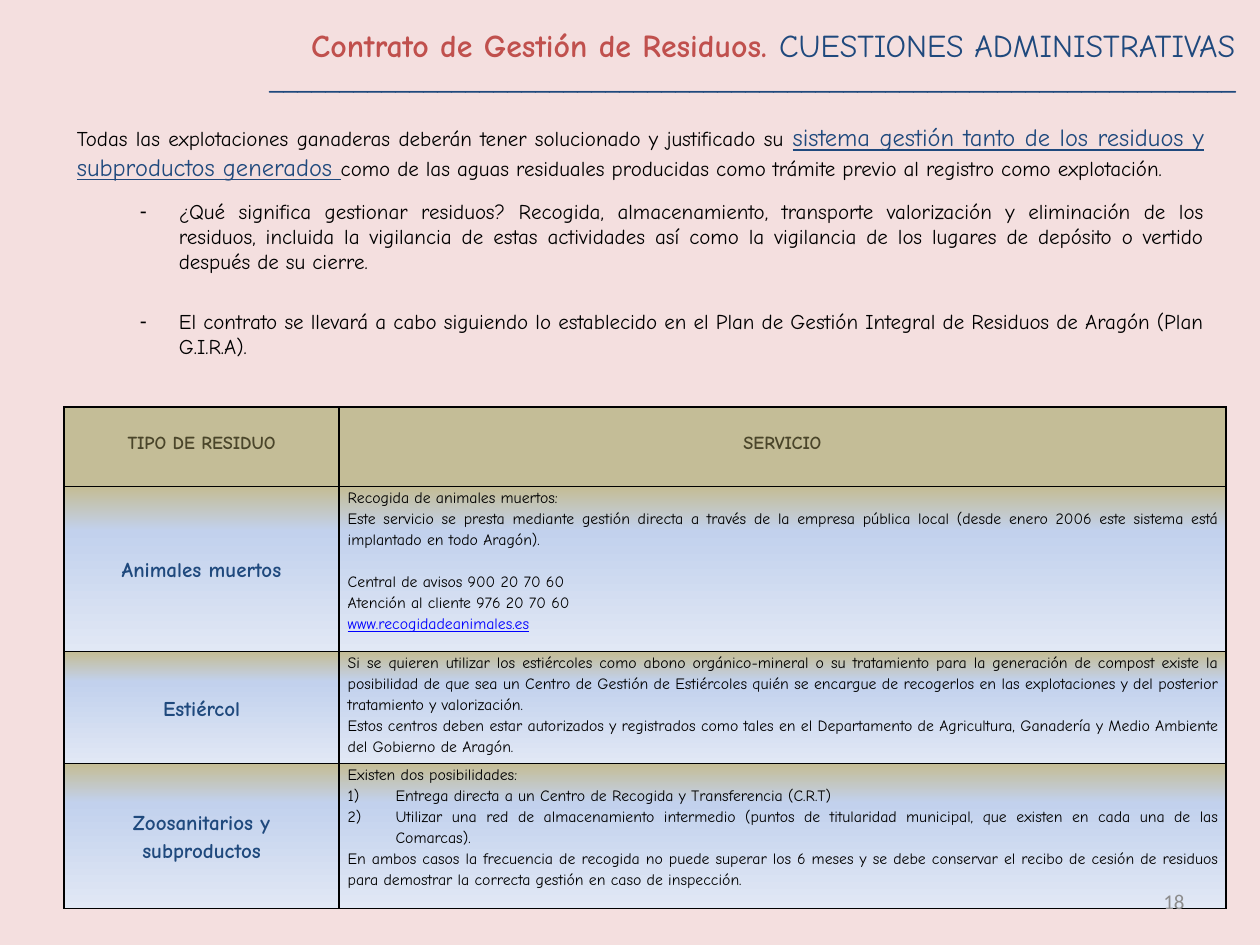
from lxml import etree
from pptx import Presentation
from pptx import util as u
from pptx.dml.color import RGBColor
from pptx.enum import text
from pptx.oxml.ns import qn

BACKGROUND = RGBColor(0xF4, 0xDF, 0xDF)
RED = RGBColor(0xC0, 0x50, 0x4D)
NAVY = RGBColor(0x1F, 0x49, 0x7D)
BLACK = RGBColor(0, 0, 0)
LINK = RGBColor(0, 0, 0xFF)
GREY = RGBColor(0x8C, 0x8C, 0x8C)
KHAKI = RGBColor(0xC4, 0xBD, 0x97)
BROWN = RGBColor(0x4A, 0x45, 0x2A)
PALE_BLUE = RGBColor(0xC2, 0xD1, 0xED)
ICE = RGBColor(0xE1, 0xE8, 0xF5)
CELL_GRADIENT = [(1, KHAKI), (27, PALE_BLUE), (100, ICE)]

ALIGN = text.PP_ALIGN
ANCHOR = text.MSO_ANCHOR

SERVICES = [
    ("Animales muertos", 1.31, [
        ("Recogida de animales muertos:", {}),
        ("Este servicio se presta mediante gestión directa a través de la empresa "
         "pública local (desde enero 2006 este sistema está implantado en todo Aragón).", {}),
        ("Central de avisos 900 20 70 60", {"before": 12}),
        ("Atención al cliente 976 20 70 60", {}),
        ("www.recogidadeanimales.es", {"color": LINK, "underline": True}),
    ]),
    ("Estiércol", 0.89, [
        ("Si se quieren utilizar los estiércoles como abono orgánico-mineral o su "
         "tratamiento para la generación de compost existe la posibilidad de que sea un "
         "Centro de Gestión de Estiércoles quién se encargue de recogerlos en las "
         "explotaciones y del posterior tratamiento y valorización.", {}),
        ("Estos centros deben estar autorizados y registrados como tales en el "
         "Departamento de Agricultura, Ganadería y Medio Ambiente del Gobierno de Aragón.", {}),
    ]),
    ("Zoosanitarios y subproductos", 1.15, [
        ("Existen dos posibilidades:", {}),
        ("Entrega directa a un Centro de Recogida y Transferencia (C.R.T)", {"numbered": True}),
        ("Utilizar una red de almacenamiento intermedio (puntos de titularidad municipal, "
         "que existen en cada una de las Comarcas).", {"numbered": True}),
        ("En ambos casos la frecuencia de recogida no puede superar los 6 meses y se debe "
         "conservar el recibo de cesión de residuos para demostrar la correcta gestión en "
         "caso de inspección.", {}),
    ]),
]


class Deck:
    font = "Comic Neue"

    def __init__(self):
        self.prs = Presentation()
        self.prs.slide_width, self.prs.slide_height = u.Inches(10), u.Inches(7.5)
        self.s = self.prs.slides.add_slide(self.prs.slide_layouts[1])
        fill = self.s.background.fill
        fill.solid()
        fill.fore_color.rgb = BACKGROUND

    def place(self, sp, box, anchor):
        sp.left, sp.top, sp.width, sp.height = (u.Inches(v) for v in box)
        tf = sp.text_frame
        tf.word_wrap = True
        tf.auto_size = text.MSO_AUTO_SIZE.NONE
        tf.vertical_anchor = anchor
        return tf

    def run(self, p, words, size, color, bold=False, underline=False, font=None):
        r = p.add_run()
        r.text = words
        f = r.font
        f.name, f.size, f.bold, f.underline = font or self.font, u.Pt(size), bold, underline
        f.color.rgb = color

    def paragraph(self, tf, first, align, before=0, spacing=1):
        p = tf.paragraphs[0] if first else tf.add_paragraph()
        p.alignment, p.line_spacing = align, spacing
        p.space_before = u.Pt(before)
        return p

    def bullet(self, p, left, hanging, tag, **attributes):
        """Give a paragraph a hanging indent and a bullet element."""
        pPr = p._p.get_or_add_pPr()
        pPr.set("marL", str(u.Inches(left)))
        pPr.set("indent", str(-u.Inches(hanging)))
        etree.SubElement(pPr, qn(tag), **attributes)

    def title(self, box, runs):
        tf = self.place(self.s.shapes.title, box, ANCHOR.TOP)
        tf.margin_top, tf.margin_bottom = u.Inches(0.2), 0
        p = self.paragraph(tf, True, ALIGN.RIGHT)
        for words, size, color, bold in runs:
            self.run(p, words, size, color, bold)

    def body(self, box, intro, points):
        tf = self.place(self.s.placeholders[1], box, ANCHOR.TOP)
        p = self.paragraph(tf, True, ALIGN.JUSTIFY)
        self.bullet(p, 0, 0, "a:buNone")
        for words, size, color, underline in intro:
            self.run(p, words, size, color, underline=underline)
        for words, before in points:
            p = self.paragraph(tf, False, ALIGN.JUSTIFY, before)
            p.level = 1
            self.bullet(p, 0.81, 0.31, "a:buChar", char="-")
            self.run(p, words, 12, BLACK)

    def label(self, box, words, size, color, font):
        tf = self.place(self.s.shapes.add_textbox(0, 0, 0, 0), box, ANCHOR.MIDDLE)
        self.run(self.paragraph(tf, True, ALIGN.RIGHT), words, size, color, font=font)

    def solid(self, parent, color):
        fill = etree.SubElement(parent, qn("a:solidFill"))
        etree.SubElement(fill, qn("a:srgbClr"), val=str(color))

    def cell(self, cell, anchor, gradient=None, bottom=0):
        """Set margins, black borders and fill; return the text frame."""
        cell.margin_left = cell.margin_right = u.Inches(0.07)
        cell.margin_top, cell.margin_bottom = 0, u.Inches(bottom)
        cell.vertical_anchor = anchor
        tcPr = cell._tc.get_or_add_tcPr()
        for side in ("lnL", "lnR", "lnT", "lnB"):
            self.solid(etree.SubElement(tcPr, qn("a:" + side), w=str(u.Pt(1))), BLACK)
        if gradient:
            fill = etree.SubElement(tcPr, qn("a:gradFill"), rotWithShape="1")
            stops = etree.SubElement(fill, qn("a:gsLst"))
            for percent, color in gradient:
                stop = etree.SubElement(stops, qn("a:gs"), pos=str(percent * 1000))
                etree.SubElement(stop, qn("a:srgbClr"), val=str(color))
            etree.SubElement(fill, qn("a:lin"), ang="5400000", scaled="0")
        else:
            cell.fill.solid()
            cell.fill.fore_color.rgb = KHAKI
        return cell.text_frame

    def table(self, box, widths, header, header_height, rows):
        frame = self.s.shapes.add_table(len(rows) + 1, len(widths), *(u.Inches(v) for v in box))
        table = frame.table
        table.first_row = table.horz_banding = False
        for column, width in zip(table.columns, widths):
            column.width = u.Inches(width)
        table.rows[0].height = u.Inches(header_height)
        for i, words in enumerate(header):
            tf = self.cell(table.cell(0, i), ANCHOR.MIDDLE, bottom=0.08)
            p = self.paragraph(tf, True, ALIGN.CENTER, spacing=1.15)
            self.run(p, words, 10.5, BROWN, True)
        for i, (kind, height, details) in enumerate(rows, 1):
            table.rows[i].height = u.Inches(height)
            tf = self.cell(table.cell(i, 0), ANCHOR.MIDDLE, CELL_GRADIENT)
            p = self.paragraph(tf, True, ALIGN.CENTER, spacing=1.15)
            self.run(p, kind, 12, NAVY, True)
            tf = self.cell(table.cell(i, 1), ANCHOR.TOP, CELL_GRADIENT)
            for j, (words, look) in enumerate(details):
                p = self.paragraph(tf, j == 0, ALIGN.JUSTIFY, look.get("before", 0), 1.15)
                if look.get("numbered"):
                    self.bullet(p, 0.38, 0.38, "a:buAutoNum", type="arabicParenR")
                self.run(p, words, 9, look.get("color", BLACK),
                         underline=look.get("underline", False))


def main():
    deck = Deck()
    deck.title((0, 0, 9.91, 0.76), [
        ("Contrato de Gestión de Residuos. ", 18.2, RED, True),
        ("CUESTIONES ADMINISTRATIVAS ", 18.2, NAVY, False),
        ("_" * 69, 16.2, NAVY, False),
    ])
    deck.body((0.51, 0.92, 9.15, 2.6), [
        ("Todas las explotaciones ganaderas deberán tener solucionado y justificado su ",
         12, BLACK, False),
        ("sistema gestión tanto de los residuos y subproductos generados ", 14, NAVY, True),
        ("como de las aguas residuales producidas como trámite previo al registro "
         "como explotación.", 12, BLACK, False),
    ], [
        ("¿Qué significa gestionar residuos? Recogida, almacenamiento, transporte "
         "valorización y eliminación de los residuos, incluida la vigilancia de estas "
         "actividades así como la vigilancia de los lugares de depósito o vertido después "
         "de su cierre.", 10),
        ("El contrato se llevará a cabo siguiendo lo establecido en el Plan de Gestión "
         "Integral de Residuos de Aragón (Plan G.I.R.A).", 19.5),
    ])
    deck.table((0.51, 3.23, 9.22, 3.98), (2.18, 7.04),
               ("TIPO DE RESIDUO", "SERVICIO"), 0.63, SERVICES)
    deck.label((7.17, 6.95, 2.33, 0.4), "18", 12, GREY, "Calibri")
    deck.prs.save("out.pptx")


if __name__ == "__main__":
    main()
